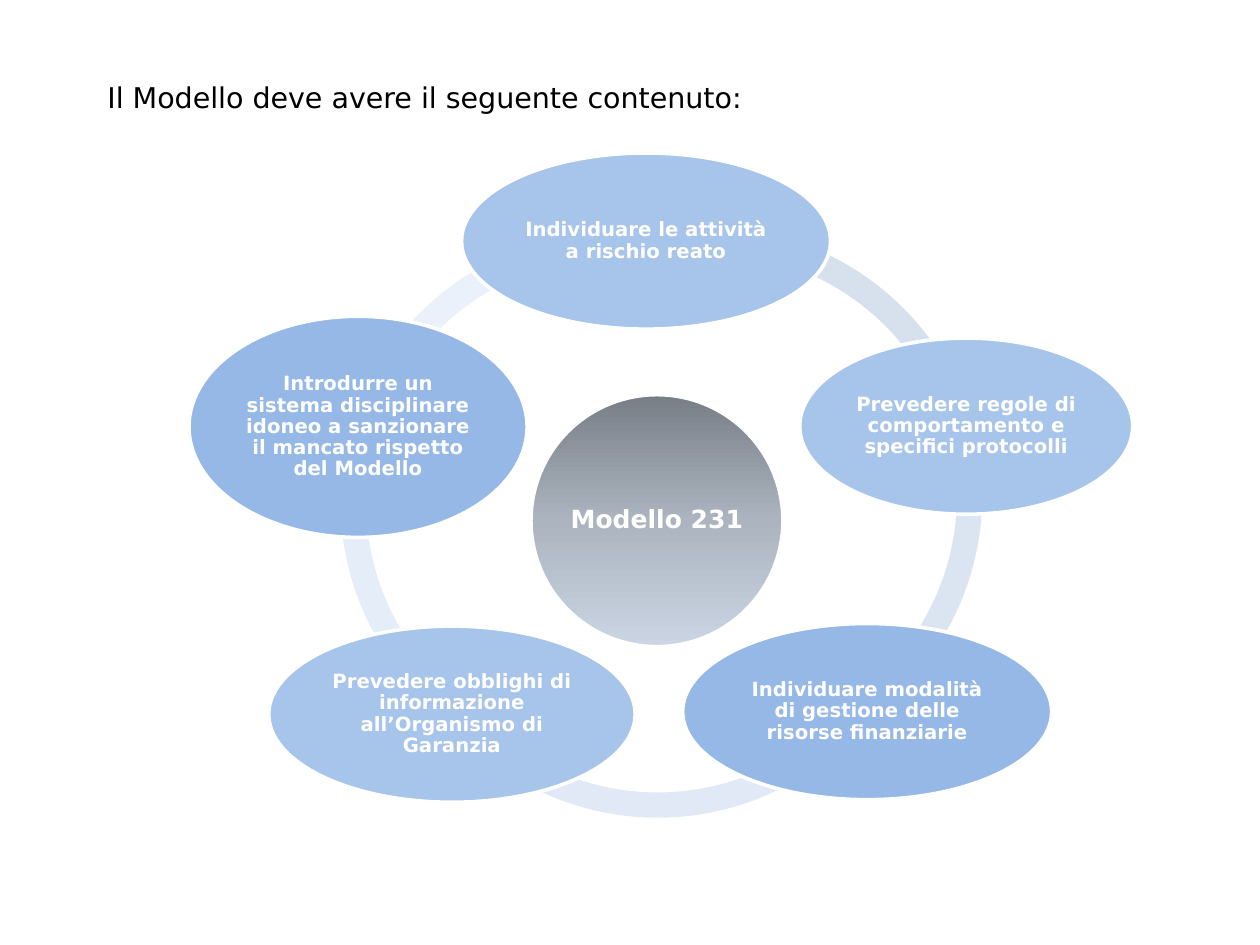
from copy import deepcopy
from pptx import Presentation
from pptx import util as u
from pptx.dml.color import RGBColor
from pptx.enum import shapes, text

FONT = "DejaVu Sans"
COLORS = {
    "white": "FFFFFF", "black": "000000", "light": "A7C4EB", "mid": "95B8E7",
    "top": "787E86", "center": "ABB4BF", "base": "CBD5E3",
    "arc1": "EBF1FA", "arc2": "E5EDF8", "arc3": "E0E9F5",
    "arc4": "DBE5F1", "arc5": "D7E0ED",
}
RING = 4.27
ARCS = [
    (2.64, 1.81, 197.57, 276.89, "arc1"),
    (2.65, 1.77, 127.67, 196.23, "arc2"),
    (2.98, 2.09, 38.98, 140.33, "arc3"),
    (3.37, 1.72, 345.11, 53.58, "arc4"),
    (3.38, 1.77, 256.37, 343.69, "arc5"),
]
STEPS = [
    (3.59, 1.19, 2.87, 1.37, "light", "Individuare le attività a rischio reato"),
    (6.22, 2.63, 2.59, 1.37, "light",
     "Prevedere regole di comportamento e specifici protocolli"),
    (5.31, 4.85, 2.87, 1.37, "mid",
     "Individuare modalità di gestione delle risorse finanziarie"),
    (2.09, 4.87, 2.85, 1.37, "light",
     "Prevedere obblighi di informazione all’Organismo di Garanzia"),
    (1.47, 2.46, 2.63, 1.72, "mid",
     "Introdurre un sistema disciplinare idoneo a sanzionare il mancato rispetto del Modello"),
]


def rgb(name):
    return RGBColor.from_string(COLORS[name])


def apply(item, values):
    for key, value in values.items():
        setattr(item, key, value)


def paint(fill, color):
    fill.solid()
    fill.fore_color.rgb = rgb(color)


def write(shape, words, size, color, bold, inset, anchor, space):
    frame = shape.text_frame
    side, edge = (u.Inches(n) for n in inset)
    apply(frame, {
        "text": words, "word_wrap": True, "vertical_anchor": anchor,
        "auto_size": text.MSO_AUTO_SIZE.NONE,
        "margin_left": side, "margin_right": side,
        "margin_top": edge, "margin_bottom": edge,
    })
    para = frame.paragraphs[0]
    apply(para, {"alignment": text.PP_ALIGN.CENTER, "line_spacing": space,
                 "space_before": u.Pt(0)})
    font = para.runs[0].font
    apply(font, {"name": FONT, "size": u.Pt(size), "bold": bold})
    font.color.rgb = rgb(color)


def add_title(slide, words):
    title = slide.shapes.title
    apply(title, {"left": u.Inches(0.56), "top": u.Inches(0.57),
                  "width": u.Inches(5.49), "height": u.Inches(1.98)})
    write(title, words, 16, "black", False, (0.1, 0.05), text.MSO_ANCHOR.TOP, 1.0)


def add_arc(slide, left, top, start, end, color):
    arc = slide.shapes.add_shape(shapes.MSO_SHAPE.BLOCK_ARC, u.Inches(left),
                                 u.Inches(top), u.Inches(RING), u.Inches(RING))
    arc.shadow.inherit = False
    for index, value in enumerate((start * 0.6, end * 0.6, 0.046)):
        arc.adjustments[index] = value
    paint(arc.fill, color)
    arc.line.fill.background()


def add_oval(slide, left, top, width, height, color, words, size=11):
    oval = slide.shapes.add_shape(shapes.MSO_SHAPE.OVAL, u.Inches(left),
                                  u.Inches(top), u.Inches(width), u.Inches(height))
    oval.shadow.inherit = False
    paint(oval.fill, color)
    paint(oval.line.fill, "white")
    oval.line.width = u.Pt(2)
    write(oval, words, size, "white", True, (0.02, 0.02),
          text.MSO_ANCHOR.MIDDLE, 0.9)
    return oval


def shade(fill, names):
    fill.gradient()
    fill.gradient_angle = 270
    first = fill.gradient_stops[0]
    first.color.rgb = rgb(names[0])
    stops = fill._fill._gradFill.gsLst
    stops.insert(1, deepcopy(stops[0]))
    for index, (stop, name) in enumerate(zip(fill.gradient_stops, names)):
        stop.position = index / (len(names) - 1)
        stop.color.rgb = rgb(name)


def main():
    deck = Presentation()
    apply(deck, {"slide_width": u.Inches(9.8), "slide_height": u.Inches(7.35)})
    slide = deck.slides.add_slide(deck.slide_layouts[5])
    add_title(slide, "Il Modello deve avere il seguente contenuto:")
    for arc in ARCS:
        add_arc(slide, *arc)
    hub = add_oval(slide, 4.13, 3.07, 1.96, 1.96, "center", "Modello 231", 14)
    shade(hub.fill, ("top", "center", "base"))
    for step in STEPS:
        add_oval(slide, *step)
    deck.save("out.pptx")


if __name__ == "__main__":
    main()
